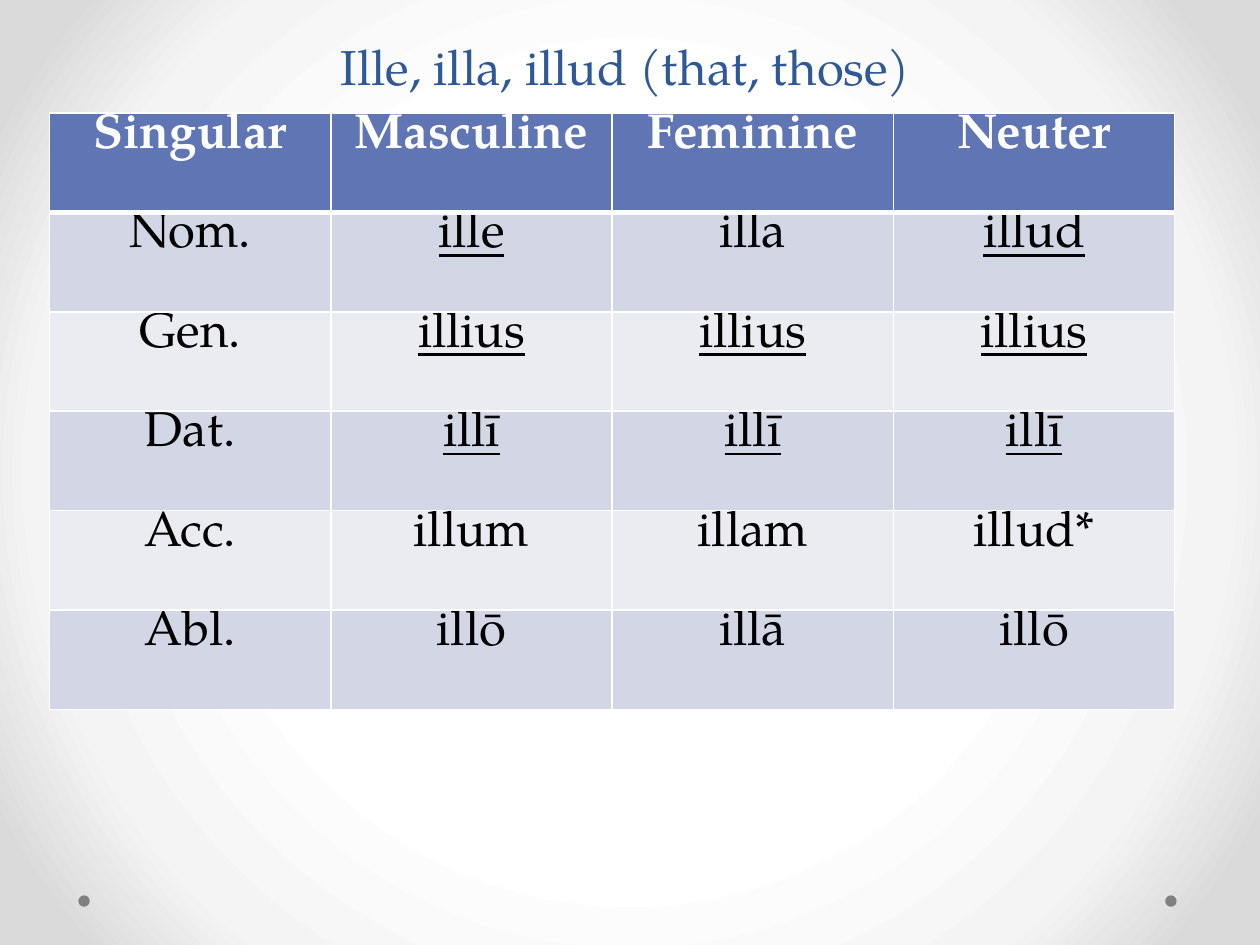
from dataclasses import dataclass

from lxml.etree import SubElement
from pptx import Presentation
from pptx.dml.color import RGBColor as Color
from pptx.enum.shapes import MSO_SHAPE as Preset
from pptx.enum.text import MSO_ANCHOR as Anchor, PP_ALIGN as Align
from pptx.oxml.ns import qn
from pptx.util import Cm, Pt


@dataclass(frozen=True)
class Theme:
    """Colours, font and type size of the slide."""
    font: str = "TeX Gyre Pagella"
    size: int = 28
    title: str = "2F5897"
    header: str = "6076B4"
    bands: tuple = ("D2D6E5", "EAECF2")
    ink: str = "000000"
    white: str = "FFFFFF"
    dot: str = "808080"
    backdrop: tuple = ((50, "FFFFFF"), (76, "F4F4F4"), (92, "DADADA"))


THEME = Theme()
HEADINGS = ("Singular", "Masculine", "Feminine", "Neuter")
CASES = (
    ("Nom.", "ille", "illa", "illud"),
    ("Gen.", "illius", "illius", "illius"),
    ("Dat.", "illī", "illī", "illī"),
    ("Acc.", "illum", "illam", "illud*"),
    ("Abl.", "illō", "illā", "illō"),
)
UNDERLINED = {"ille", "illud", "illius", "illī"}


def write(frame, text, color=THEME.ink, bold=False, underline=False):
    """Put one centred, formatted line of text in a frame."""
    para = frame.paragraphs[0]
    para.alignment = Align.CENTER
    span = para.add_run()
    span.text = text
    font = span.font
    font.name, font.size = THEME.font, Pt(THEME.size)
    font.bold, font.underline = bold, underline
    font.color.rgb = Color.from_string(color)


def paint_backdrop(page):
    """Fill the page with a gradient that darkens away from the centre."""
    page.background.fill.gradient()
    gradient = page.element.xpath(".//a:gradFill")[0]
    for child in list(gradient):
        gradient.remove(child)
    stops = SubElement(gradient, qn("a:gsLst"))
    for percent, color in THEME.backdrop:
        stop = SubElement(stops, qn("a:gs"), pos=str(percent * 1000))
        SubElement(stop, qn("a:srgbClr"), val=color)
    circle = SubElement(gradient, qn("a:path"), path="circle")
    SubElement(circle, qn("a:fillToRect"), dict.fromkeys("ltrb", "50000"))


def add_dots(page, left, top, width, size):
    """Set a small dot at each end of the given strip."""
    for x in (left, left + width - size):
        dot = page.shapes.add_shape(Preset.OVAL, x, top, size, size)
        dot.shadow.inherit = False
        dot.fill.solid()
        dot.fill.fore_color.rgb = Color.from_string(THEME.dot)
        dot.line.fill.background()


def place_title(page, text, left, top, width, height):
    """Move the title placeholder to its box and write in it."""
    title = page.shapes.title
    title.left, title.top, title.width, title.height = left, top, width, height
    frame = title.text_frame
    frame.vertical_anchor = Anchor.BOTTOM
    frame.margin_top = frame.margin_bottom = 0
    write(frame, text, color=THEME.title)


def style_cell(cell, fill, bottom=1):
    """Give a cell its white borders, fill and vertical margins."""
    cell.margin_top = cell.margin_bottom = 0
    properties = cell._tc.get_or_add_tcPr()
    for side, width in (("L", 1), ("R", 1), ("T", 1), ("B", bottom)):
        line = SubElement(properties, qn(f"a:ln{side}"), w=str(Pt(width)))
        solid = SubElement(line, qn("a:solidFill"))
        SubElement(solid, qn("a:srgbClr"), val=THEME.white)
    cell.fill.solid()
    cell.fill.fore_color.rgb = Color.from_string(fill)


def add_declension(page, left, top, width, height):
    """Add the table of cases and genders."""
    rows = (HEADINGS, *CASES)
    table = page.shapes.add_table(
        len(rows), len(HEADINGS), left, top, width, height).table
    for r, words in enumerate(rows):
        for c, word in enumerate(words):
            cell = table.cell(r, c)
            if r == 0:
                style_cell(cell, THEME.header, bottom=3)
                write(cell.text_frame, word, color=THEME.white, bold=True)
            else:
                style_cell(cell, THEME.bands[(r - 1) % 2])
                marked = word in UNDERLINED and (r, c) != (5, 0)
                write(cell.text_frame, word, underline=marked)


def main():
    """Build the slide and save it."""
    deck = Presentation()
    deck.slide_width, deck.slide_height = Cm(25.4), Cm(19.05)
    page = deck.slides.add_slide(deck.slide_layouts[5])
    paint_backdrop(page)
    add_dots(page, Cm(1.58), Cm(18.05), Cm(22.14), Cm(0.23))
    place_title(page, "Ille, illa, illud (that, those)",
                Cm(4.67), Cm(-0.56), Cm(15.88), Cm(2.49))
    add_declension(page, Cm(1), Cm(2.28), Cm(22.68), Cm(12.02))
    deck.save("out.pptx")


if __name__ == "__main__":
    main()
